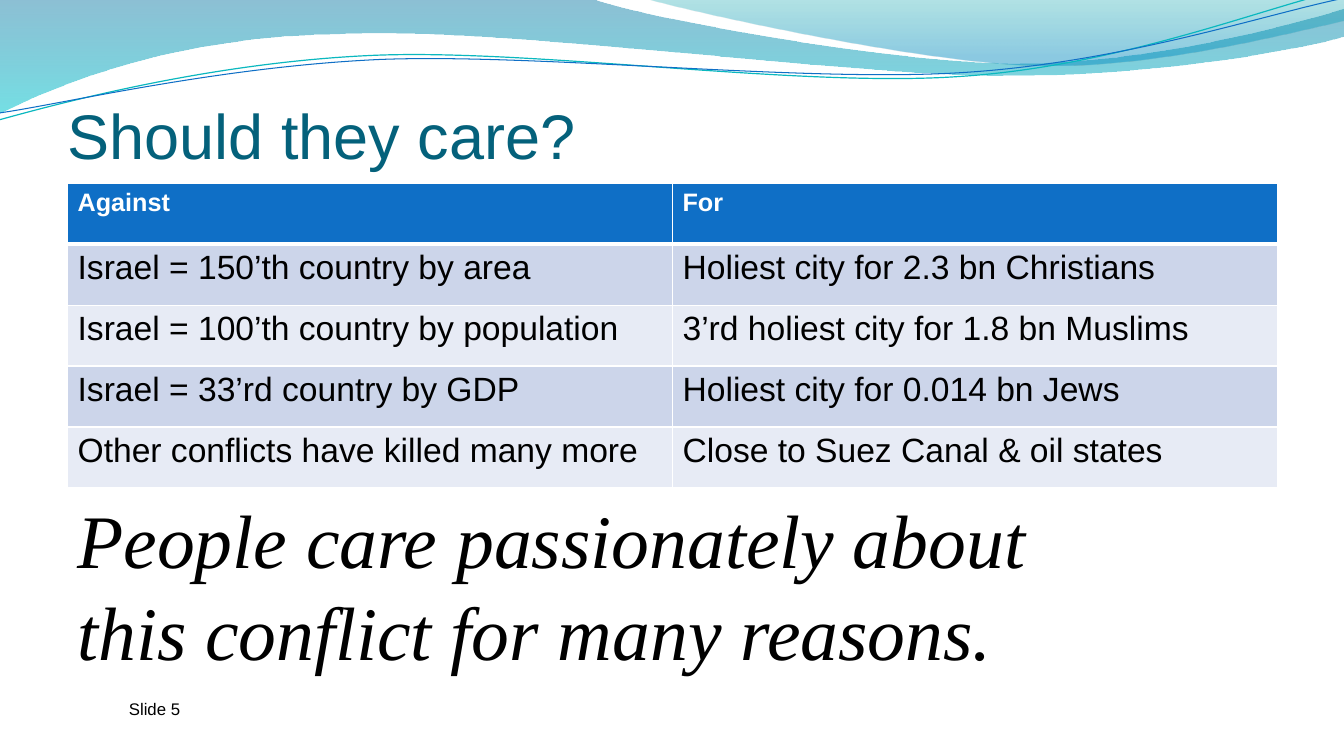
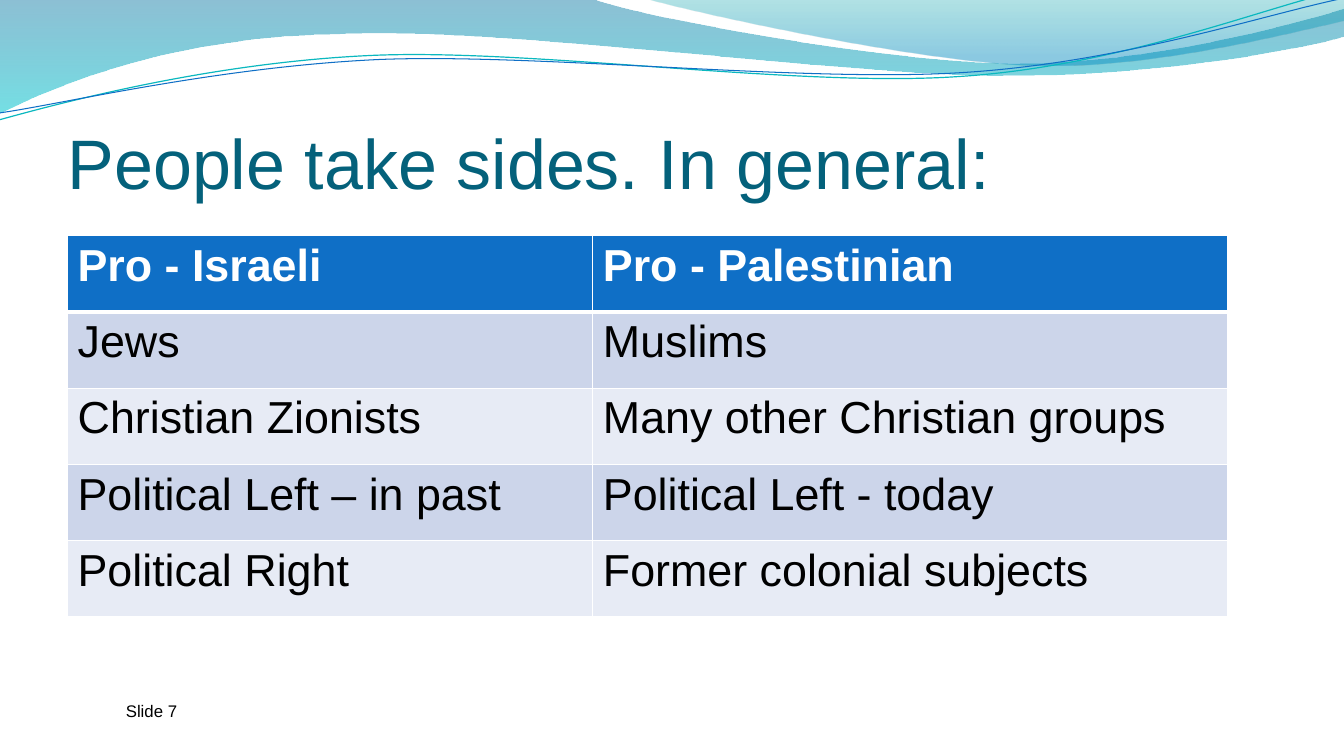
import math
from pptx import Presentation
from pptx import util as u
from pptx.dml.color import RGBColor
from pptx.enum import text
from pptx.oxml.ns import qn
from lxml import etree

PX = 9144  # EMU per px, 100 px to the inch
TILT = 2.7  # degrees the strands are turned anticlockwise

# Header waves in px: two numbers make a line, six make a Bézier curve
BANDS = [
    ([(0, 0), (587, -1), (634, 17, 885, 63, 1011, 63),
      (1138, 63, 1278, 26, 1333, 9), (1335, 36),
      (1311, 44, 1160, 76, 994, 75), (829, 75, 509, 28, 343, 34),
      (172, 36, 61, 83, -1, 113), (0, 0)],
     [(0, "0074A1", 45), (1, "00C6CF", 55)]),
    ([(639, -1), (679, 11, 909, 62, 1025, 65),
      (1141, 69, 1282, 32, 1333, 21), (1333, 0), (639, -1)],
     [(0, "00A1A9", 30), (0.8, "008BBF", 45)]),
]
STRANDS = [
    ([(-1, 119), (64, 101, 211, 62, 369, 55), (527, 48, 790, 87, 950, 76),
      (1110, 66, 1252, 8, 1331, -10)], (665, 57), "0AB8BF", 0.85),
    ([(0, 112), (63, 103, 218, 66, 378, 59), (537, 53, 796, 82, 955, 72),
      (1115, 62, 1255, 14, 1334, -2)], (667, 59), "0F6FC6", 0.75),
]


def px(length):
    return u.Emu(round(length * PX))


def color(code):
    return RGBColor.from_string(code)


def turn(point, center, degrees):
    """Turn a point clockwise about a center."""
    sine, cosine = math.sin(math.radians(degrees)), math.cos(math.radians(degrees))
    x, y = point[0] - center[0], point[1] - center[1]
    return center[0] + x * cosine - y * sine, center[1] + x * sine + y * cosine


class Deck:
    FONT, SERIF = "Arial", "Times New Roman"
    TITLE, INK, WHITE = "04617B", "000000", "FFFFFF"
    HEADER, STRIPES = "0F6FC6", ("E7EBF5", "CCD5EA")
    LEFT = 67

    def __init__(self):
        self.presentation = Presentation()
        self.presentation.slide_width = px(1333)
        self.presentation.slide_height = px(750)
        self.slide = None

    def add_slide(self, title, top, height, size):
        layout = self.presentation.slide_layouts[5]
        self.slide = self.presentation.slides.add_slide(layout)
        self.waves()
        self.title(title, top, height, size)

    def style(self, paragraph, size, code, name=FONT, bold=False, italic=False):
        font = paragraph.font
        font.size, font.name = u.Pt(size), name
        font.bold, font.italic = bold, italic
        font.color.rgb = color(code)

    # Header decoration
    def outline(self, segments, close=False, center=(0, 0), tilt=0):
        points = [turn(segment[i:i + 2], center, tilt)
                  for segment in segments for i in range(0, len(segment), 2)]
        points = [(px(x), px(y)) for x, y in points]
        builder = self.slide.shapes.build_freeform(*points[0])
        builder.add_line_segments(points[1:], close=close)
        shape = builder.convert_to_shape()
        shape.rotation = -tilt
        shape.shadow.inherit = False
        # Join each three points of a curve into one Bézier element
        lines = iter(list(shape._element.iter(qn("a:lnTo"))))
        for segment in segments[1:]:
            first = next(lines)
            if len(segment) == 6:
                first.tag = qn("a:cubicBezTo")
                for line in (next(lines), next(lines)):
                    first.append(line[0])
                    line.getparent().remove(line)
        return shape

    def waves(self):
        for segments, stops in BANDS:
            shape = self.outline(segments, close=True)
            shape.line.fill.background()
            shape.fill.gradient()
            shape.fill.gradient_angle = 270
            for stop, (position, code, _) in zip(shape.fill.gradient_stops, stops):
                stop.position = position
                stop.color.rgb = color(code)
            for element, (_, _, opacity) in zip(shape._element.spPr.iter(qn("a:srgbClr")), stops):
                etree.SubElement(element, qn("a:alpha"), val=str(opacity * 1000))
        for segments, center, code, width in STRANDS:
            shape = self.outline(segments, center=center, tilt=TILT)
            shape.fill.background()
            shape.line.color.rgb = color(code)
            shape.line.width = u.Pt(width)

    # Text
    def title(self, words, top, height, size):
        shape = self.slide.shapes.title
        shape.left, shape.top = px(self.LEFT), px(top)
        shape.width, shape.height = px(1200), px(height)
        frame = shape.text_frame
        frame.text = words
        frame.auto_size = text.MSO_AUTO_SIZE.NONE
        frame.vertical_anchor = text.MSO_ANCHOR.BOTTOM
        frame.margin_left = frame.margin_right = frame.margin_bottom = 0
        frame.margin_top = px(5)
        paragraph = frame.paragraphs[0]
        paragraph.alignment = text.PP_ALIGN.LEFT
        self.style(paragraph, size, self.TITLE)

    def text_box(self, words, left, top, width, height, size, **font):
        shape = self.slide.shapes.add_textbox(px(left), px(top), px(width), px(height))
        shape.text_frame.word_wrap = True
        shape.text_frame.text = words
        paragraph = shape.text_frame.paragraphs[0]
        self.style(paragraph, size, self.INK, **font)
        return paragraph

    def statement(self, words, top):
        paragraph = self.text_box(words, self.LEFT, top, 1063, 192, 54,
                                  name=self.SERIF, italic=True)
        paragraph.line_spacing = u.Pt(65.5)

    def slide_number(self, number, left, top):
        self.text_box(f"Slide {number}", left, top, 233, 40, 12)

    # Tables
    def borders(self, cell, **widths):
        properties = cell._tc.get_or_add_tcPr()
        for side in "LRTB":
            line = etree.SubElement(properties, qn(f"a:ln{side}"),
                                    w=str(u.Pt(widths.get(side, 1))))
            fill = etree.SubElement(line, qn("a:solidFill"))
            etree.SubElement(fill, qn("a:srgbClr"), val=self.WHITE)

    def table(self, rows, top, height, widths, header_size, body_size):
        table = self.slide.shapes.add_table(
            len(rows), len(widths), px(self.LEFT), px(top),
            px(sum(widths)), px(height)).table
        for column, width in zip(table.columns, widths):
            column.width = px(width)
        for row, values in enumerate(rows):
            header = row == 0
            thick = {0: {"B": 3}, 1: {"T": 3}}.get(row, {})
            for column, value in enumerate(values):
                cell = table.cell(row, column)
                cell.text = value
                self.borders(cell, **thick)
                cell.fill.solid()
                cell.fill.fore_color.rgb = color(self.HEADER if header else self.STRIPES[row % 2])
                self.style(cell.text_frame.paragraphs[0],
                           header_size if header else body_size,
                           self.WHITE if header else self.INK, bold=header)


def main():
    deck = Deck()

    # Reasons to care
    deck.add_slide("Should they care?", 100, 71, 45)
    deck.table([
        ("Against", "For"),
        ("Israel = 150’th country by area", "Holiest city for 2.3 bn Christians"),
        ("Israel = 100’th country by population", "3’rd holiest city for 1.8 bn Muslims"),
        ("Israel = 33’rd country by GDP", "Holiest city for 0.014 bn Jews"),
        ("Other conflicts have killed many more", "Close to Suez Canal & oil states"),
    ], 182, 302, (600, 600), 18, 24)
    deck.statement("People care passionately about this conflict for many reasons.", 483)
    deck.slide_number(5, 118, 688)

    # Who takes which side
    deck.add_slide("People take sides. In general:", 77, 125, 50)
    deck.table([
        ("Pro - Israeli", "Pro - Palestinian"),
        ("Jews", "Muslims"),
        ("Christian Zionists", "Many other Christian groups"),
        ("Political Left – in past", "Political Left - today"),
        ("Political Right", "Former colonial subjects"),
    ], 234, 378, (521, 630), 32, 32)
    deck.slide_number(7, 115, 690)

    deck.presentation.save("out.pptx")


if __name__ == "__main__":
    main()
